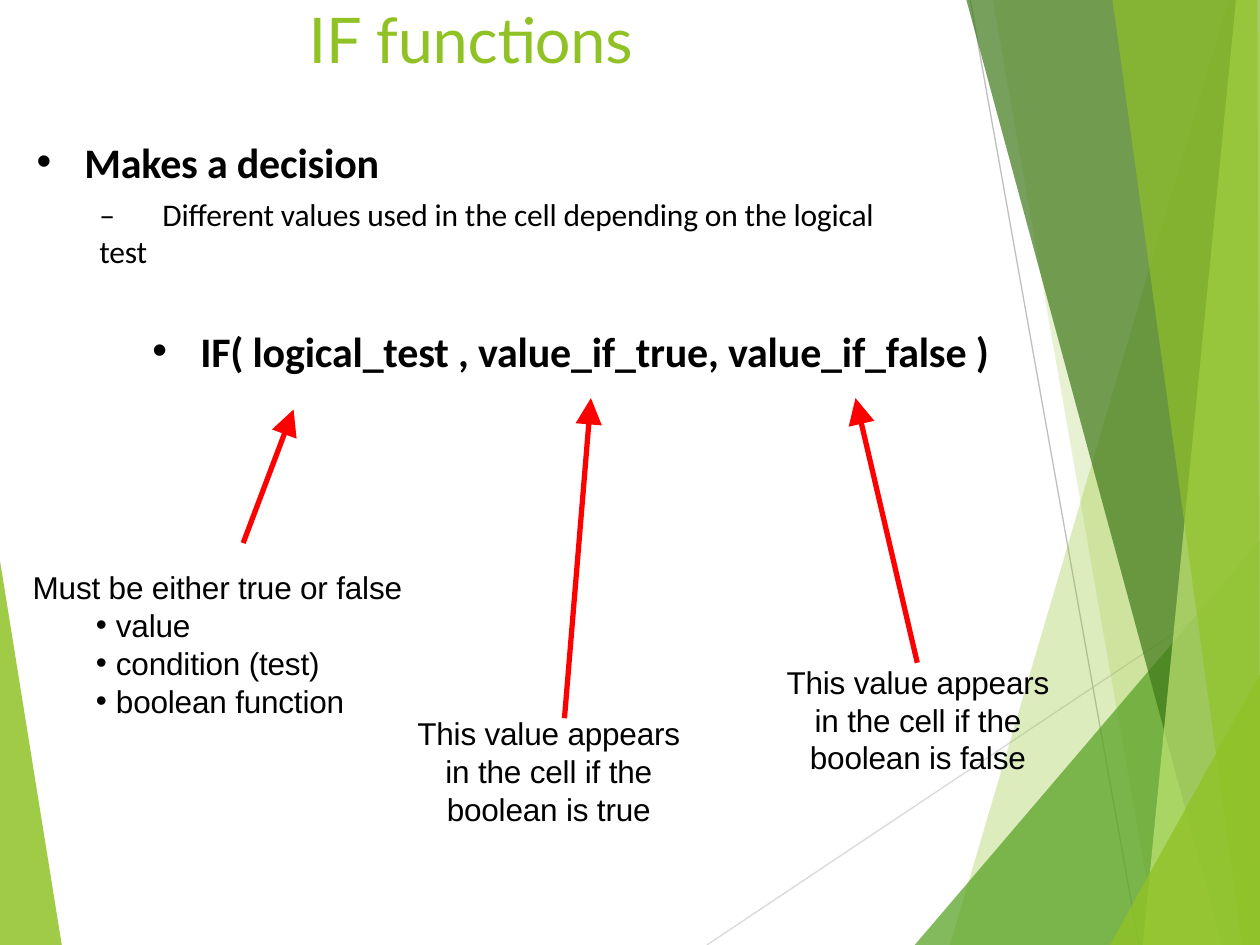
from lxml.etree import SubElement
from pptx import Presentation
from pptx.dml.color import RGBColor
from pptx.enum.shapes import MSO_CONNECTOR
from pptx.enum.text import PP_ALIGN
from pptx.oxml.ns import qn
from pptx.util import Inches, Pt

COLORS = {
    "lime": "90C226",
    "green": "54A021",
    "forest": "3F7819",
    "pale": "C0E474",
    "light_gray": "D9D9D9",
    "gray": "BFBFBF",
    "black": "000000",
    "red": "FF0000",
}

FACETS = [
    ("lime", 85, [(0, 4.45), (0.49, 7.5), (0, 7.5)]),
    ("lime", 30, [(9.75, 0), (7.54, 7.5), (10, 7.5), (10, 0)]),
    ("lime", 20, [(7.88, 0), (9.19, 7.5), (10, 7.5), (10, 0)]),
    ("green", 72, [(7.26, 7.5), (10, 4.29), (10, 7.5)]),
    ("forest", 70, [(7.67, 0), (9.7, 7.5), (10, 7.5), (10, 0)]),
    ("pale", 70, [(9.81, 0), (9.07, 7.5), (10, 7.5), (10, 0)]),
    ("lime", 65, [(8.83, 0), (9.86, 7.5), (10, 7.5), (9.98, 0)]),
    ("lime", 80, [(8.81, 7.5), (10, 5.35), (10, 7.5)]),
]


def color(name):
    return RGBColor.from_string(COLORS[name])


def add_facet(slide, fill_name, opacity, points):
    corners = [(Inches(x), Inches(y)) for x, y in points]
    builder = slide.shapes.build_freeform(*corners[0], scale=1.0)
    builder.add_line_segments(corners[1:], close=True)
    shape = builder.convert_to_shape()
    shape.shadow.inherit = False
    shape.line.fill.background()
    shape.fill.solid()
    shape.fill.fore_color.rgb = color(fill_name)
    fill_color = shape._element.spPr.find(f".//{qn('a:srgbClr')}")
    SubElement(fill_color, qn("a:alpha"), val=str(opacity * 1000))


def add_line(slide, start, end, color_name, width, arrow=False):
    connector = slide.shapes.add_connector(
        MSO_CONNECTOR.STRAIGHT, *(Inches(value) for value in start + end)
    )
    connector.line.color.rgb = color(color_name)
    connector.line.width = Pt(width)
    if arrow:
        SubElement(connector.line._get_or_add_ln(), qn("a:tailEnd"),
                   type="triangle", w="lg", len="lg")
    SubElement(connector._element.spPr, qn("a:effectLst"))


def add_background(slide):
    add_facet(slide, *FACETS[0])
    add_line(slide, (5.61, 7.5), (10, 4.57), "light_gray", 0.75)
    add_line(slide, (7.7, 0), (9.04, 7.5), "gray", 0.75)
    for facet in FACETS[1:]:
        add_facet(slide, *facet)


def add_text_box(slide, box, texts):
    text_box = slide.shapes.add_textbox(*(Inches(value) for value in box))
    frame = text_box.text_frame
    frame.word_wrap = True
    frame.margin_left = frame.margin_right = 0
    frame.margin_top = frame.margin_bottom = 0
    frame.text = "\n".join(texts)
    return frame.paragraphs


def format_paragraph(paragraph, font_name, size, color_name="black", bold=False,
                     left=0.0, hanging=0.0, bullet=None, tab=None):
    properties = paragraph._p.get_or_add_pPr()
    properties.set("marL", str(Inches(left)))
    properties.set("indent", str(-Inches(hanging)))
    if bullet:
        SubElement(properties, qn("a:buFont"), typeface="Arial")
        SubElement(properties, qn("a:buChar"), char=bullet)
    if tab:
        tabs = SubElement(properties, qn("a:tabLst"))
        SubElement(tabs, qn("a:tab"), pos=str(Inches(tab)), algn="l")
    for run in paragraph.runs:
        run.font.name = font_name
        run.font.size = Pt(size)
        run.font.bold = bold
        run.font.color.rgb = color(color_name)
        run._r.get_or_add_rPr().set("spc", "-10")


def add_title(slide, box):
    title, = add_text_box(slide, box, ["IF functions"])
    format_paragraph(title, "Lato", 36, "lime", left=1.78)


def format_heading(paragraph):
    format_paragraph(paragraph, "Calibri", 24, bold=True,
                     left=0.39, hanging=0.38, bullet="•", tab=0.39)


def add_purpose(slide, box):
    heading, detail = add_text_box(slide, box, [
        "Makes a decision",
        "–\tDifferent values used in the cell depending on the logical test",
    ])
    format_heading(heading)
    format_paragraph(detail, "Calibri", 18, left=0.51, tab=0.83)
    detail.space_before = Pt(4.7)


def add_formula(slide, box):
    formula, = add_text_box(
        slide, box, ["IF( logical_test , value_if_true, value_if_false )"]
    )
    format_heading(formula)


def add_test_note(slide, box):
    lead, *options = add_text_box(slide, box, [
        "Must be either true or false", "value", "condition (test)", "boolean function",
    ])
    format_paragraph(lead, "Arial", 18, left=0.01)
    for option in options:
        format_paragraph(option, "Arial", 18, left=0.67, hanging=0.16,
                         bullet="•", tab=0.67)


def add_result_note(slide, box, outcome):
    note, = add_text_box(
        slide, box, [f"This value appears in the cell if the boolean is {outcome}"]
    )
    format_paragraph(note, "Arial", 18, left=0.01)
    note.alignment = PP_ALIGN.CENTER


def main():
    presentation = Presentation()
    presentation.slide_width = Inches(10)
    presentation.slide_height = Inches(7.5)
    slide = presentation.slides.add_slide(presentation.slide_layouts[6])
    add_background(slide)
    add_title(slide, (0.67, 0, 6.94, 0.75))
    add_purpose(slide, (0.28, 1.08, 7.04, 1.1))
    add_formula(slide, (1.2, 2.58, 6.9, 0.4))
    add_test_note(slide, (0.25, 4.51, 3.05, 1.18))
    add_result_note(slide, (3.28, 5.67, 2.14, 0.88), "true")
    add_result_note(slide, (6.21, 5.26, 2.14, 0.88), "false")
    for start, end in [
        ((1.93, 4.31), (2.33, 3.25)),
        ((4.48, 5.7), (4.69, 3.16)),
        ((7.28, 5.26), (6.79, 3.16)),
    ]:
        add_line(slide, start, end, "red", 3, arrow=True)
    presentation.save("out.pptx")


if __name__ == "__main__":
    main()
